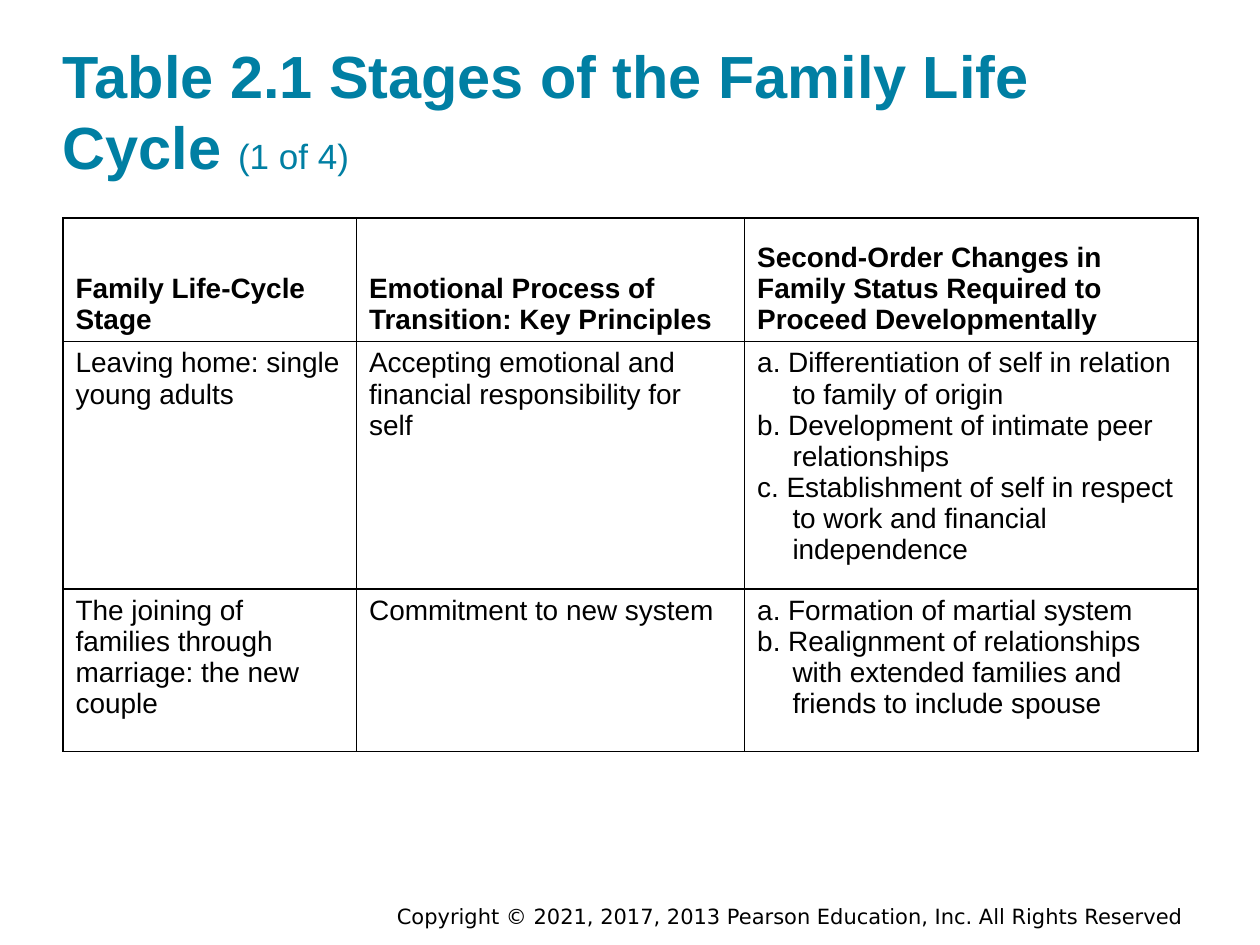
from dataclasses import dataclass

from lxml import etree
from pptx import Presentation
from pptx.dml.color import RGBColor
from pptx.enum import text as t
from pptx.oxml import ns
from pptx.util import Inches, Pt

HUES = {"title": "007FA3", "ink": "000000"}
FONT = "Arial"
HANG = Inches(0.28)


@dataclass
class Style:
    size: float
    hue: str = "ink"
    bold: bool = False
    face: str = FONT


@dataclass
class Row:
    high: float
    cells: list[list[str]]
    head: bool = False


COLS = [2.33, 3.08, 3.6]
ROWS = [
    Row(0.98, [
        ["Family Life-Cycle Stage"],
        ["Emotional Process of Transition: Key Principles"],
        ["Second-Order Changes in Family Status Required to Proceed Developmentally"],
    ], head=True),
    Row(1.96, [
        ["Leaving home: single young adults"],
        ["Accepting emotional and financial responsibility for self"],
        ["a. Differentiation of self in relation to family of origin",
         "b. Development of intimate peer relationships",
         "c. Establishment of self in respect to work and financial independence"],
    ]),
    Row(1.29, [
        ["The joining of families through marriage: the new couple"],
        ["Commitment to new system"],
        ["a. Formation of martial system",
         "b. Realignment of relationships with extended families and friends to include spouse"],
    ]),
]


def paint(run, style: Style) -> None:
    font = run.font
    font.name, font.size, font.bold = style.face, Pt(style.size), style.bold
    font.color.rgb = RGBColor.from_string(HUES[style.hue])


def hang(para) -> None:
    props = para._p.get_or_add_pPr()
    props.set("marL", str(HANG))
    props.set("indent", str(-HANG))


def add_box(slide, left: float, top: float, wide: float, high: float, anchor):
    box = slide.shapes.add_textbox(Inches(left), Inches(top), Inches(wide), Inches(high))
    frame = box.text_frame
    frame.word_wrap = True
    frame.vertical_anchor = anchor
    return frame


def add_edges(cell) -> None:
    props = cell._tc.get_or_add_tcPr()
    for side in ("lnL", "lnR", "lnT", "lnB"):
        line = etree.SubElement(props, ns.qn(f"a:{side}"), w=str(Pt(1)))
        fill = etree.SubElement(line, ns.qn("a:solidFill"))
        etree.SubElement(fill, ns.qn("a:srgbClr"), val=HUES["ink"])


def fill_cell(cell, lines: list[str], head: bool) -> None:
    add_edges(cell)
    cell.fill.background()
    cell.vertical_anchor = t.MSO_ANCHOR.BOTTOM if head else t.MSO_ANCHOR.TOP
    cell.text_frame.text = "\n".join(lines)
    for para in cell.text_frame.paragraphs:
        if len(lines) > 1:
            hang(para)
        paint(para.runs[0], Style(16, bold=head))


def add_grid(slide) -> None:
    high = sum(row.high for row in ROWS)
    grid = slide.shapes.add_table(len(ROWS), len(COLS), Inches(0.5), Inches(1.73),
                                  Inches(9), Inches(high)).table
    for col, wide in zip(grid.columns, COLS):
        col.width = Inches(wide)
    for r, row in enumerate(ROWS):
        grid.rows[r].height = Inches(row.high)
        for c, lines in enumerate(row.cells):
            fill_cell(grid.cell(r, c), lines, row.head)


def main() -> None:
    deck = Presentation()
    deck.slide_width, deck.slide_height = Inches(10), Inches(7.5)
    slide = deck.slides.add_slide(deck.slide_layouts[6])

    # Copyright line
    foot = add_box(slide, 2.93, 7.04, 6.56, 0.46, t.MSO_ANCHOR.MIDDLE)
    foot.text = "Copyright © 2021, 2017, 2013 Pearson Education, Inc. All Rights Reserved"
    para = foot.paragraphs[0]
    para.alignment = t.PP_ALIGN.RIGHT
    hang(para)
    paint(para.runs[0], Style(12, face="DejaVu Sans"))

    # Title with page count
    title = add_box(slide, 0.5, 0.24, 9, 1.2, t.MSO_ANCHOR.BOTTOM)
    title.margin_left = title.margin_right = title.margin_top = title.margin_bottom = 0
    para = title.paragraphs[0]
    para.text = "Table 2.1 Stages of the Family Life Cycle "
    paint(para.runs[0], Style(34, "title", bold=True))
    count = para.add_run()
    count.text = "(1 of 4)"
    paint(count, Style(20, "title"))

    # Table of stages
    add_grid(slide)

    deck.save("out.pptx")


if __name__ == "__main__":
    main()
